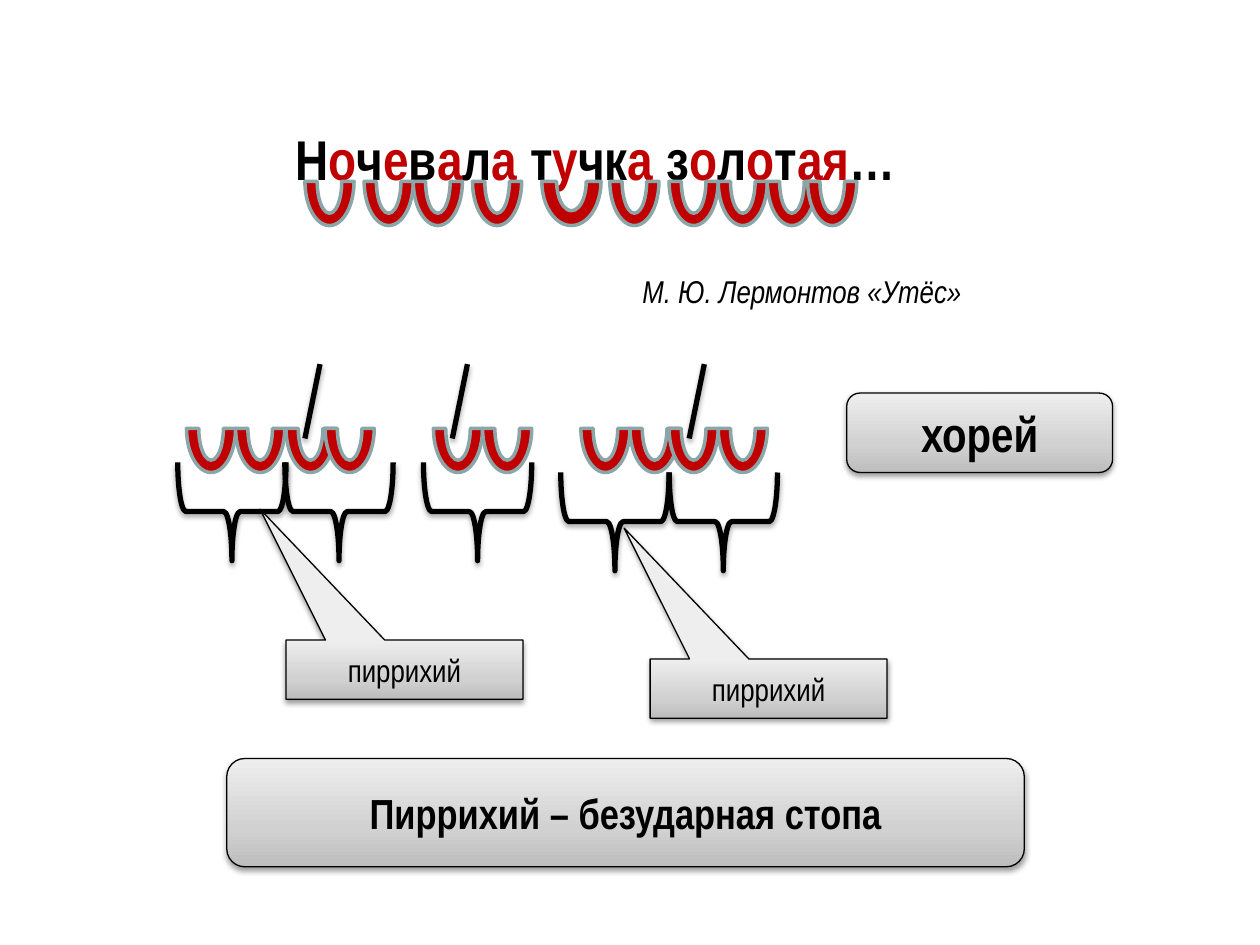
"""Build a slide on pyrrhic feet in a trochaic line of verse."""
from itertools import groupby

from lxml.etree import SubElement
from pptx import Presentation
from pptx.dml.color import RGBColor
from pptx.enum.shapes import MSO_CONNECTOR as CONNECTOR, MSO_SHAPE as SHAPE
from pptx.enum.text import MSO_ANCHOR as ANCHOR, PP_ALIGN as ALIGN
from pptx.oxml.ns import qn
from pptx.util import Inches, Pt

COLORS = {"ink": "000000", "red": "C00000", "edge": "8AA6A8"}
GRADIENT = {0: "BDBDBD", 35: "D1D1D1", 100: "EEEEEE"}
VOWELS = "оеауя"


def add_shadow(shape, alpha, distance):
    effects = SubElement(shape._element.spPr, qn("a:effectLst"))
    shadow = SubElement(effects, qn("a:outerShdw"), blurRad=str(Pt(3.1)),
                        dist=str(Pt(distance)), dir="5400000", rotWithShape="0")
    color = SubElement(shadow, qn("a:srgbClr"), val=COLORS["ink"])
    SubElement(color, qn("a:alpha"), val=str(alpha * 1000))


def write_text(shape, runs, alignment, **font_format):
    shape.text_frame.word_wrap = True
    paragraph = shape.text_frame.paragraphs[0]
    paragraph.alignment = alignment
    for text, color in runs:
        run = paragraph.add_run()
        run.text = text
        run.font.color.rgb = RGBColor.from_string(COLORS[color])
        for name, value in {"name": "Arial Narrow", **font_format}.items():
            setattr(run.font, name, value)


presentation = Presentation()
presentation.slide_width, presentation.slide_height = Inches(10), Inches(7.5)
slide = presentation.slides.add_slide(presentation.slide_layouts[6])
shapes = slide.shapes

verse = shapes.add_textbox(Inches(1.09), Inches(0.94), Inches(7.27), Inches(0.64))
letters = groupby("Ночевала тучка золотая…", lambda letter: letter in VOWELS)
verse_runs = [("".join(group), "red" if vowel else "ink") for vowel, group in letters]
write_text(verse, verse_runs, ALIGN.CENTER, size=Pt(32), bold=True)

author = shapes.add_textbox(Inches(5), Inches(2.11), Inches(4.06), Inches(0.4))
write_text(author, [("М. Ю. Лермонтов «Утёс»", "ink")], ALIGN.LEFT,
           size=Pt(18), italic=True)

syllable_rows = {
    1.09: [2.42, 2.89, 3.28, 3.75, 4.3, 4.84, 5.31, 5.7, 6.09, 6.41],
    3.05: [1.48, 1.87, 2.27, 2.58, 3.44, 3.83, 4.61, 5, 5.31, 5.7],
}
for top, lefts in syllable_rows.items():
    for left in lefts:
        width = 0.47 if left == 4.3 else 0.39
        arc = shapes.add_shape(SHAPE.BLOCK_ARC, Inches(left), Inches(top),
                               Inches(width), Inches(0.7))
        arc.rotation = 180
        arc.shadow.inherit = False
        arc.fill.solid()
        arc.fill.fore_color.rgb = RGBColor.from_string(COLORS["red"])
        arc.line.color.rgb = RGBColor.from_string(COLORS["edge"])
        arc.line.width = Pt(2)

marks = [shapes.add_connector(CONNECTOR.STRAIGHT, Inches(left + 0.12), Inches(2.89),
                              Inches(left), Inches(3.48))
         for left in (2.42, 3.59, 5.47)]

for left, top in [(1.45, 3.63), (2.3, 3.63), (3.4, 3.63), (4.49, 3.71), (5.35, 3.71)]:
    brace = shapes.add_shape(SHAPE.RIGHT_BRACE, Inches(left), Inches(top),
                             Inches(0.78), Inches(0.86))
    brace.rotation = 90
    brace.fill.background()
    marks.append(brace)

for mark in marks:
    mark.line.color.rgb = RGBColor.from_string(COLORS["ink"])
    mark.line.width = Pt(3)
    add_shadow(mark, 35, 1.8)

boxes = [
    (SHAPE.ROUNDED_RECTANGLE, 6.72, 3.12, 2.11, 0.63, "хорей", 28, True),
    (SHAPE.RECTANGULAR_CALLOUT, 2.27, 5.08, 1.88, 0.47, "пиррихий", 18, False),
    (SHAPE.RECTANGULAR_CALLOUT, 5.16, 5.23, 1.88, 0.47, "пиррихий", 18, False),
    (SHAPE.ROUNDED_RECTANGLE, 1.8, 6.02, 6.33, 0.86, "Пиррихий – безударная стопа", 24, True),
]
for kind, left, top, width, height, text, size, bold in boxes:
    box = shapes.add_shape(kind, Inches(left), Inches(top), Inches(width), Inches(height))
    if kind == SHAPE.RECTANGULAR_CALLOUT:
        box.adjustments[0], box.adjustments[1] = -0.61, -2.71
    box.fill.gradient()
    box.fill.gradient_angle = 90
    stops = box._element.spPr.find(qn("a:gradFill")).find(qn("a:gsLst"))
    stops.clear()
    for position, color in GRADIENT.items():
        stop = SubElement(stops, qn("a:gs"), pos=str(position * 1000))
        SubElement(stop, qn("a:srgbClr"), val=color)
    box.line.color.rgb = RGBColor.from_string(COLORS["ink"])
    box.line.width = Pt(0.75)
    add_shadow(box, 38, 1.6)
    box.text_frame.vertical_anchor = ANCHOR.MIDDLE
    write_text(box, [(text, "ink")], ALIGN.CENTER, size=Pt(size), bold=bold)

presentation.save("out.pptx")
